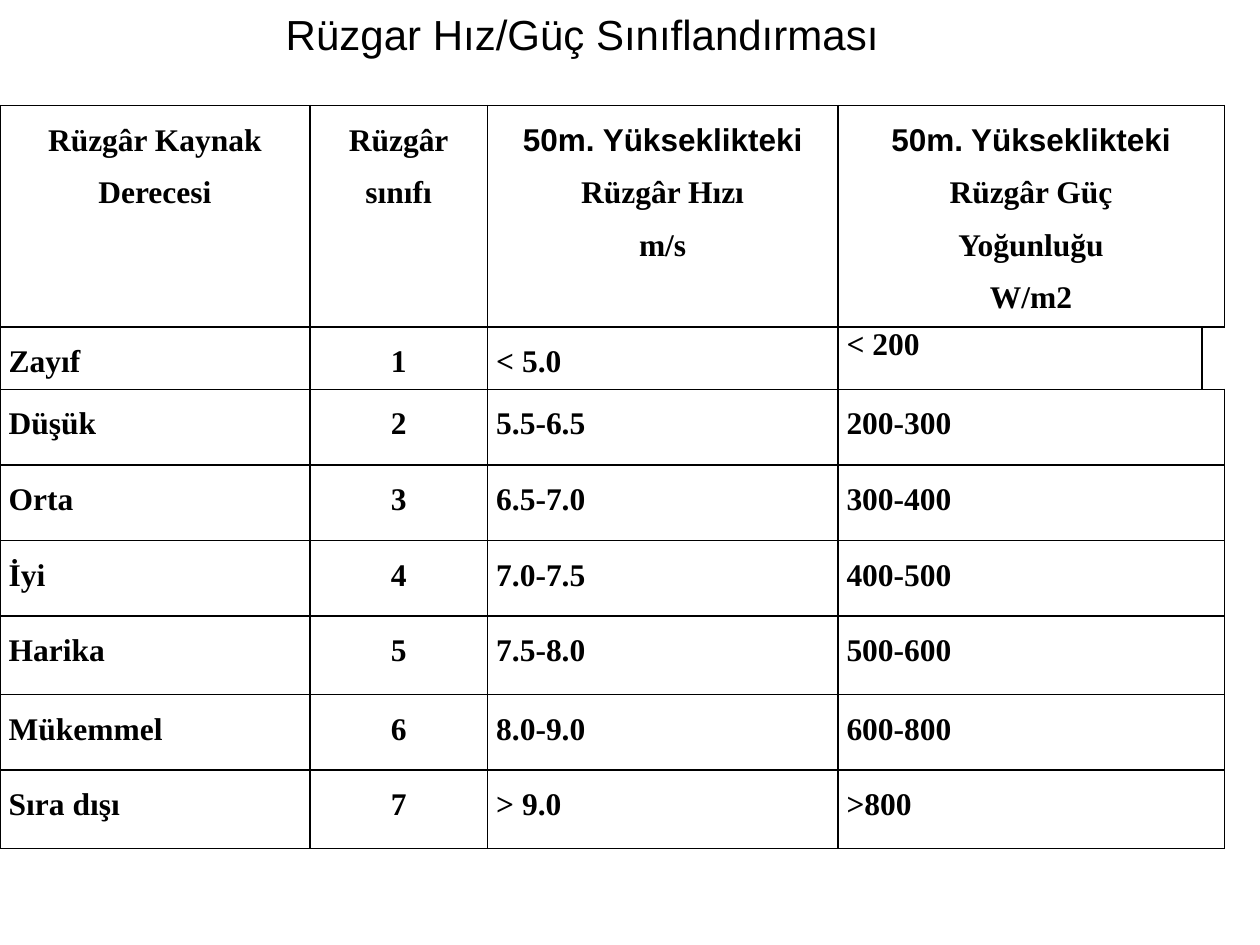
from lxml import etree
from pptx import Presentation
from pptx.dml.color import RGBColor
from pptx.enum import text
from pptx.oxml import ns
from pptx.util import Pt

COLORS = {"ink": "000000", "paper": "FFFFFF"}
SERIF, SANS = "Times New Roman", "Arial"
COL_WIDTHS = [177.1, 101.5, 200.2, 208.1, 7.9]
ROW_HEIGHTS = [126.7, 35.5, 43.2, 43.2, 43.2, 44.8, 43.2, 44.8]
HEADERS = [
    "Rüzgâr Kaynak\nDerecesi",
    "Rüzgâr\nsınıfı",
    "50m. Yükseklikteki\nRüzgâr Hızı\nm/s",
    "50m. Yükseklikteki\nRüzgâr Güç\nYoğunluğu\nW/m2",
]
WIND_CLASSES = [
    ("Zayıf", "1", "< 5.0", "< 200"),
    ("Düşük", "2", "5.5-6.5", "200-300"),
    ("Orta", "3", "6.5-7.0", "300-400"),
    ("İyi", "4", "7.0-7.5", "400-500"),
    ("Harika", "5", "7.5-8.0", "500-600"),
    ("Mükemmel", "6", "8.0-9.0", "600-800"),
    ("Sıra dışı", "7", "> 9.0", ">800"),
]
CENTER, JUSTIFY, LEFT = (text.PP_ALIGN.CENTER, text.PP_ALIGN.JUSTIFY,
                         text.PP_ALIGN.LEFT)


def style_run(r, font, size, bold=False):
    r.font.name = font
    r.font.size = Pt(size)
    r.font.bold = bold
    r.font.color.rgb = RGBColor.from_string(COLORS["ink"])


def add_title(s, title):
    tf = s.shapes.add_textbox(Pt(156.2), Pt(0), Pt(356.4), Pt(58.3)).text_frame
    tf.word_wrap = False
    tf.vertical_anchor = text.MSO_ANCHOR.TOP
    tf.margin_top = Pt(5)
    tf.text = title
    style_run(tf.paragraphs[0].runs[0], SANS, 24)


def set_borders(cell, sides):
    """Draw 1 pt lines on the given sides (L, R, T, B) and none elsewhere."""
    tcPr = cell._tc.get_or_add_tcPr()
    for i, side in enumerate("LRTB"):
        ln = etree.Element(ns.qn(f"a:ln{side}"), w=str(Pt(1)))
        if side in sides:
            fill = etree.SubElement(ln, ns.qn("a:solidFill"))
            etree.SubElement(fill, ns.qn("a:srgbClr"), val=COLORS["ink"])
        else:
            etree.SubElement(ln, ns.qn("a:noFill"))
        tcPr.insert(i, ln)


def fill_cell(cell, content, align, spacing=1.5):
    cell.text_frame.text = content
    for p in cell.text_frame.paragraphs:
        p.alignment = align
        p.line_spacing = spacing
        for r in p.runs:
            font = SANS if r.text.startswith("50m.") else SERIF
            style_run(r, font, 18, bold=True)


def add_wind_table(s):
    rows, cols = len(ROW_HEIGHTS), len(COL_WIDTHS)
    table = s.shapes.add_table(rows, cols, Pt(0), Pt(60.3),
                               Pt(sum(COL_WIDTHS)), Pt(sum(ROW_HEIGHTS))).table
    table.first_row = table.horz_banding = False
    for col, width in zip(table.columns, COL_WIDTHS):
        col.width = Pt(width)
    for row, height in zip(table.rows, ROW_HEIGHTS):
        row.height = Pt(height)

    last = cols - 1
    for i in range(rows):
        for j in range(cols):
            cell = table.cell(i, j)
            cell.fill.background()
            cell.margin_left = cell.margin_right = Pt(5)
            cell.margin_top = cell.margin_bottom = Pt(0)
            set_borders(cell, "LTB" if (i, j) == (1, last) else "LRTB")
        if i != 1:  # the "Zayıf" row keeps its narrow last cell
            table.cell(i, last - 1).merge(table.cell(i, last))

    for j, header in enumerate(HEADERS):
        fill_cell(table.cell(0, j), header, CENTER)
    for i, values in enumerate(WIND_CLASSES, start=1):
        for j, value in enumerate(values):
            fill_cell(table.cell(i, j), value, CENTER if j == 1 else JUSTIFY)
    fill_cell(table.cell(1, last - 1), WIND_CLASSES[0][-1], LEFT, spacing=1)


def main():
    prs = Presentation()
    prs.slide_width, prs.slide_height = Pt(720), Pt(540)
    s = prs.slides.add_slide(prs.slide_layouts[6])
    s.background.fill.solid()
    s.background.fill.fore_color.rgb = RGBColor.from_string(COLORS["paper"])
    add_wind_table(s)
    add_title(s, "Rüzgar Hız/Güç Sınıflandırması")
    prs.save("out.pptx")


if __name__ == "__main__":
    main()
